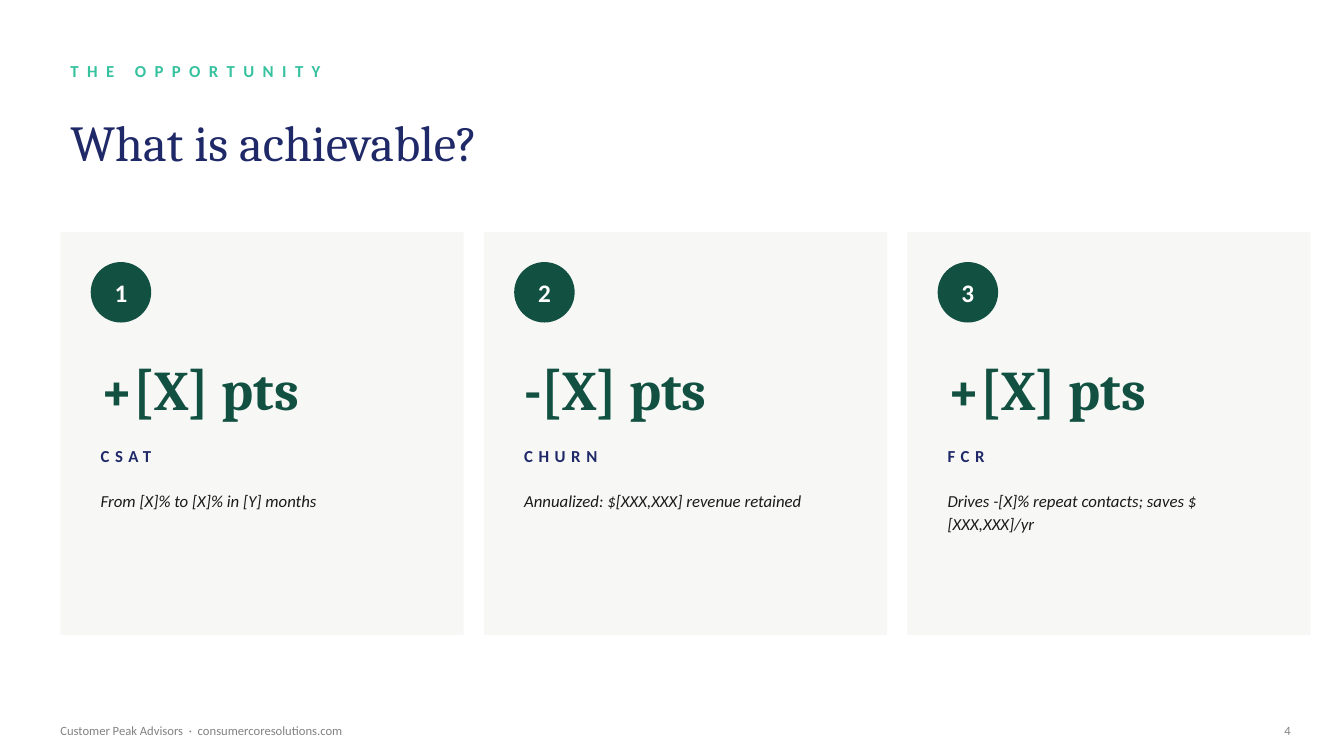
from pptx import Presentation
from pptx.dml.color import RGBColor
from pptx.enum.shapes import MSO_SHAPE
from pptx.enum.text import MSO_ANCHOR, PP_ALIGN
from pptx.util import Pt

RECT, OVAL = MSO_SHAPE.RECTANGLE, MSO_SHAPE.OVAL
TOP, MIDDLE = MSO_ANCHOR.TOP, MSO_ANCHOR.MIDDLE
LEFT, CENTER, RIGHT = PP_ALIGN.LEFT, PP_ALIGN.CENTER, PP_ALIGN.RIGHT

SCALE = 9144  # EMU per px, 100 px to the inch
NAVY, GREEN, MINT = "1F2968", "125041", "36C19F"
PALE, INK, GREY, WHITE = "F7F8F6", "1A1A1A", "828282", "FFFFFF"
SANS, SERIF = "Calibri", "Cambria"


def px(*sizes):
    return [size * SCALE for size in sizes]


def tint(code):
    return RGBColor.from_string(code)


class Deck:
    def __init__(self):
        self.prs = Presentation()
        self.prs.slide_width, self.prs.slide_height = px(1333, 750)
        self.slide = self.prs.slides.add_slide(self.prs.slide_layouts[6])
        self.base = {"name": SANS, "size": Pt(12)}

    def fill_text(self, frame, words, color, align=LEFT, anchor=MIDDLE,
                  track=0, lead=None, **style):
        frame.word_wrap = True
        frame.vertical_anchor = anchor
        para = frame.paragraphs[0]
        para.alignment = align
        if lead:
            para.line_spacing = Pt(lead)
        run = para.add_run()
        run.text = words
        for key, value in {**self.base, **style}.items():
            setattr(run.font, key, value)
        run.font.color.rgb = tint(color)
        if track:
            run._r.get_or_add_rPr().set("spc", str(track * 100))

    def text(self, box, words, color, **style):
        label = self.slide.shapes.add_textbox(*px(*box))
        self.fill_text(label.text_frame, words, color, **style)

    def shape(self, kind, box, fill):
        item = self.slide.shapes.add_shape(kind, *px(*box))
        item.shadow.inherit = False
        item.fill.solid()
        item.fill.fore_color.rgb = tint(fill)
        item.line.fill.background()
        return item

    def badge(self, box, words):
        disc = self.shape(OVAL, box, GREEN)
        self.fill_text(disc.text_frame, words, WHITE, align=CENTER,
                       size=Pt(18), bold=True)

    def card(self, left, mark, value, name, note):
        self.shape(RECT, (left, 230, 400, 400), PALE)
        inner = left + 30
        self.badge((inner, 260, 60, 60), mark)
        self.text((inner, 335, 340, 100), value, GREEN,
                  name=SERIF, size=Pt(40), bold=True)
        self.text((inner, 435, 340, 35), name, NAVY, track=4, bold=True)
        self.text((inner, 480, 340, 140), note, INK,
                  anchor=TOP, lead=16, italic=True)


def main():
    deck = Deck()

    # Heading
    deck.text((60, 50, 800, 40), "THE OPPORTUNITY", MINT, track=6, bold=True)
    deck.text((60, 95, 1200, 90), "What is achievable?", NAVY,
              name=SERIF, size=Pt(36))

    # Outcome cards
    goals = [
        ("+[X] pts", "CSAT", "From [X]% to [X]% in [Y] months"),
        ("-[X] pts", "CHURN", "Annualized: $[XXX,XXX] revenue retained"),
        ("+[X] pts", "FCR",
         "Drives -[X]% repeat contacts; saves $[XXX,XXX]/yr"),
    ]
    for index, goal in enumerate(goals):
        deck.card(60 + 420 * index, str(index + 1), *goal)

    # Footer
    deck.text((50, 710, 800, 30),
              "Customer Peak Advisors  ·  consumercoresolutions.com",
              GREY, size=Pt(9))
    deck.text((1250, 710, 40, 30), "4", GREY, align=RIGHT, size=Pt(9))

    deck.prs.save("out.pptx")


if __name__ == "__main__":
    main()
